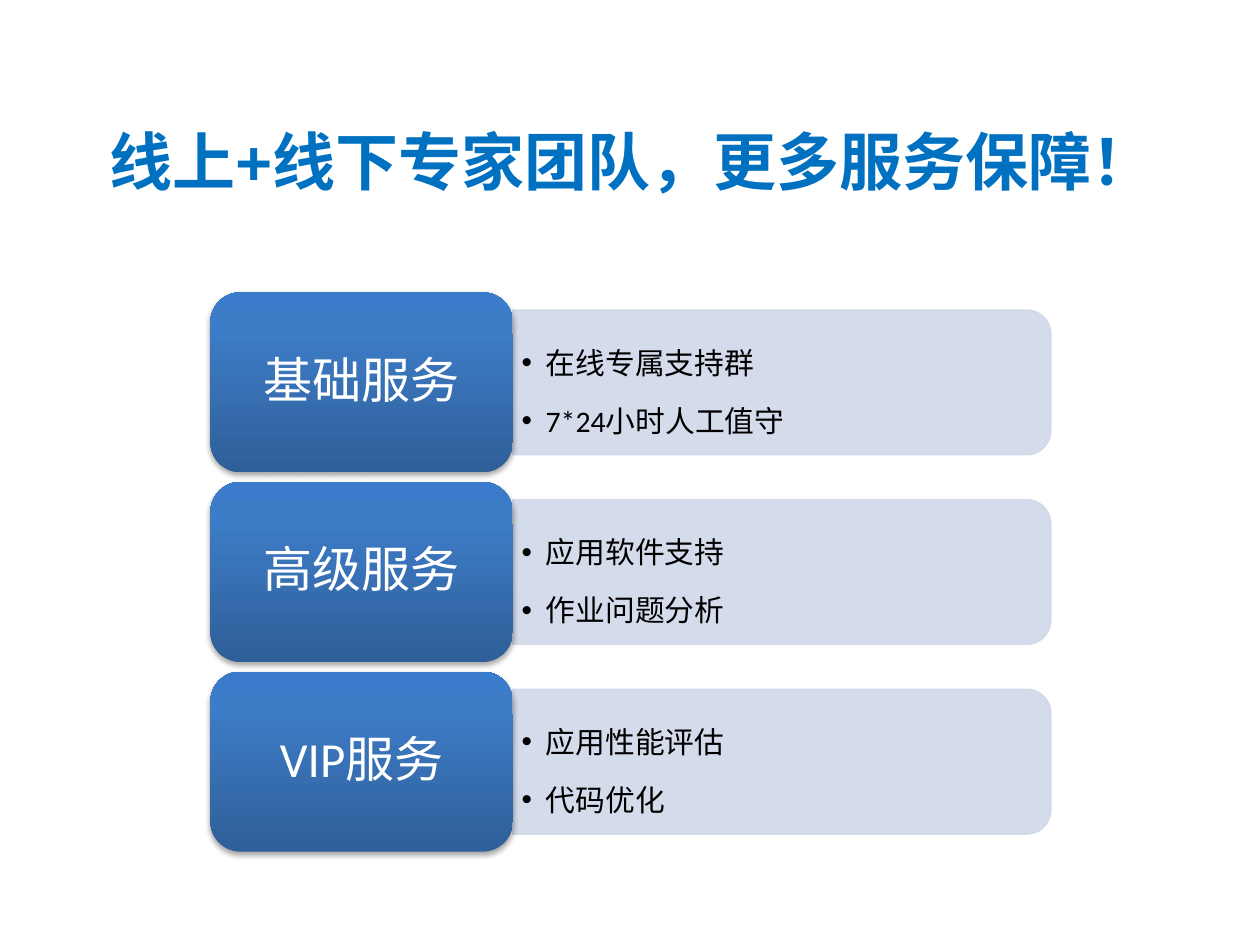
from dataclasses import dataclass

from lxml import etree
from copy import deepcopy
from pptx import Presentation
from pptx.dml.color import RGBColor
from pptx.enum.shapes import MSO_SHAPE
from pptx.enum.text import MSO_ANCHOR, PP_ALIGN
from pptx.oxml.ns import qn
from pptx.util import Emu, Inches, Pt

ROUND = MSO_SHAPE.ROUNDED_RECTANGLE
TAB = MSO_SHAPE.ROUND_2_SAME_RECTANGLE
MID = MSO_ANCHOR.MIDDLE
LEFT, MIDDLE = PP_ALIGN.LEFT, PP_ALIGN.CENTER


@dataclass(frozen=True)
class Theme:
    title: str = "0070C0"
    bar: str = "D0D8E8"
    ink: str = "000000"
    light: str = "FFFFFF"
    shade: str = "000000"
    ramp: tuple = ((0, "2F5F99"), (0.8, "3D7CC7"), (1, "3A7CCB"))
    head_font: str = "Arial"
    font: str = "Calibri"
    head_size: int = 36
    card_size: int = 28
    item_size: int = 17


@dataclass(frozen=True)
class Grid:
    left: float = 1.67
    top: float = 2.32
    tall: float = 4.44
    card_w: float = 2.4
    card_h: float = 1.43
    bar_w: float = 4.27
    bar_h: float = 1.15

    def row(self, num, count):
        gap = (self.tall - count * self.card_h) / (count - 1)
        return self.top + num * (self.card_h + gap)


THEME = Theme()
GRID = Grid()
TITLE = "线上+线下专家团队，更多服务保障！"
PLANS = (
    ("基础服务", ("在线专属支持群", "7*24小时人工值守")),
    ("高级服务", ("应用软件支持", "作业问题分析")),
    ("VIP服务", ("应用性能评估", "代码优化")),
)


def rgb(code):
    return RGBColor.from_string(code)


def add_node(root, tag, **attrs):
    return etree.SubElement(root, qn(tag), {k: str(v) for k, v in attrs.items()})


def fade(fill, share):
    """Make a solid fill partly see-through."""
    for node in fill.iter(qn("a:srgbClr")):
        add_node(node, "a:alpha", val=int(share * 100000))


def add_dot(para, indent):
    props = para._p.get_or_add_pPr()
    props.set("marL", str(indent))
    props.set("indent", str(-indent))
    add_node(props, "a:buFont", typeface="Arial")
    add_node(props, "a:buChar", char="•")


def add_text(slide, box, lines, size, color, font=THEME.font, bold=False,
             align=MIDDLE, pad=(0.1, 0.05), space=1, after=0, dots=False):
    frame = slide.shapes.add_textbox(*map(Inches, box)).text_frame
    frame.word_wrap = True
    frame.vertical_anchor = MID
    frame.margin_left = frame.margin_right = Inches(pad[0])
    frame.margin_top = frame.margin_bottom = Inches(pad[1])
    frame.text = "\n".join(lines)
    for para in frame.paragraphs:
        para.alignment = align
        para.line_spacing = space
        para.space_after = Pt(after)
        if dots:
            add_dot(para, Inches(0.19))
        for run in para.runs:
            run.font.name = font
            run.font.size = Pt(size)
            run.font.bold = bold
            run.font.color.rgb = rgb(color)


def add_bar(slide, x, y):
    """Draw a bar with round right corners, as a tab turned by 90 degrees."""
    wide, high = GRID.bar_w, GRID.bar_h
    turn = (wide - high) / 2
    bar = slide.shapes.add_shape(
        TAB, *map(Inches, (x + turn, y - turn, high, wide)))
    bar.rotation = 90
    bar.shadow.inherit = False
    bar.fill.solid()
    bar.fill.fore_color.rgb = rgb(THEME.bar)
    bar.line.color.rgb = rgb(THEME.bar)
    bar.line.width = Pt(0.75)
    fade(bar._element.spPr, 0.9)


def add_card(slide, x, y):
    card = slide.shapes.add_shape(
        ROUND, *map(Inches, (x, y, GRID.card_w, GRID.card_h)))
    card.line.fill.background()
    # Three-stop ramp, dark at the foot
    card.fill.gradient()
    card.fill.gradient_angle = 90
    stops = card._element.spPr.find(".//" + qn("a:gsLst"))
    stops.append(deepcopy(stops[0]))
    for stop, (place, color) in zip(card.fill.gradient_stops, THEME.ramp):
        stop.position = place
        stop.color.rgb = rgb(color)
    # Soft shadow below
    card.shadow.inherit = False
    glow = card._element.spPr.find(qn("a:effectLst"))
    cast = add_node(glow, "a:outerShdw", blurRad=Emu(Pt(3.1)),
                    dist=Emu(Pt(1.8)), dir=90 * 60000, rotWithShape=0)
    tint = add_node(cast, "a:srgbClr", val=THEME.shade)
    add_node(tint, "a:alpha", val=35000)


def add_plan(slide, y, name, items):
    edge = GRID.left + GRID.card_w
    drop = (GRID.card_h - GRID.bar_h) / 2
    add_bar(slide, edge, y + drop)
    inset = 0.06
    add_text(slide, (edge, y + drop + inset, GRID.bar_w - inset,
                     GRID.bar_h - 2 * inset),
             items, THEME.item_size, THEME.ink, align=LEFT,
             pad=(0.07, 0.04), space=1.5, after=2.5, dots=True)
    add_card(slide, GRID.left, y)
    rim = 0.07
    add_text(slide, (GRID.left + rim, y + rim, GRID.card_w - 2 * rim,
                     GRID.card_h - 2 * rim),
             [name], THEME.card_size, THEME.light,
             pad=(0.12, 0.06), space=0.9, after=10)


def main():
    deck = Presentation()
    deck.slide_width, deck.slide_height = Inches(10), Inches(7.5)
    slide = deck.slides.add_slide(deck.slide_layouts[6])
    # Heading
    add_text(slide, (0, 0.55, 10.03, 1.45), [TITLE], THEME.head_size,
             THEME.title, font=THEME.head_font, bold=True)
    # Service plans
    for num, (name, items) in enumerate(PLANS):
        add_plan(slide, GRID.row(num, len(PLANS)), name, items)
    deck.save("out.pptx")


if __name__ == "__main__":
    main()
